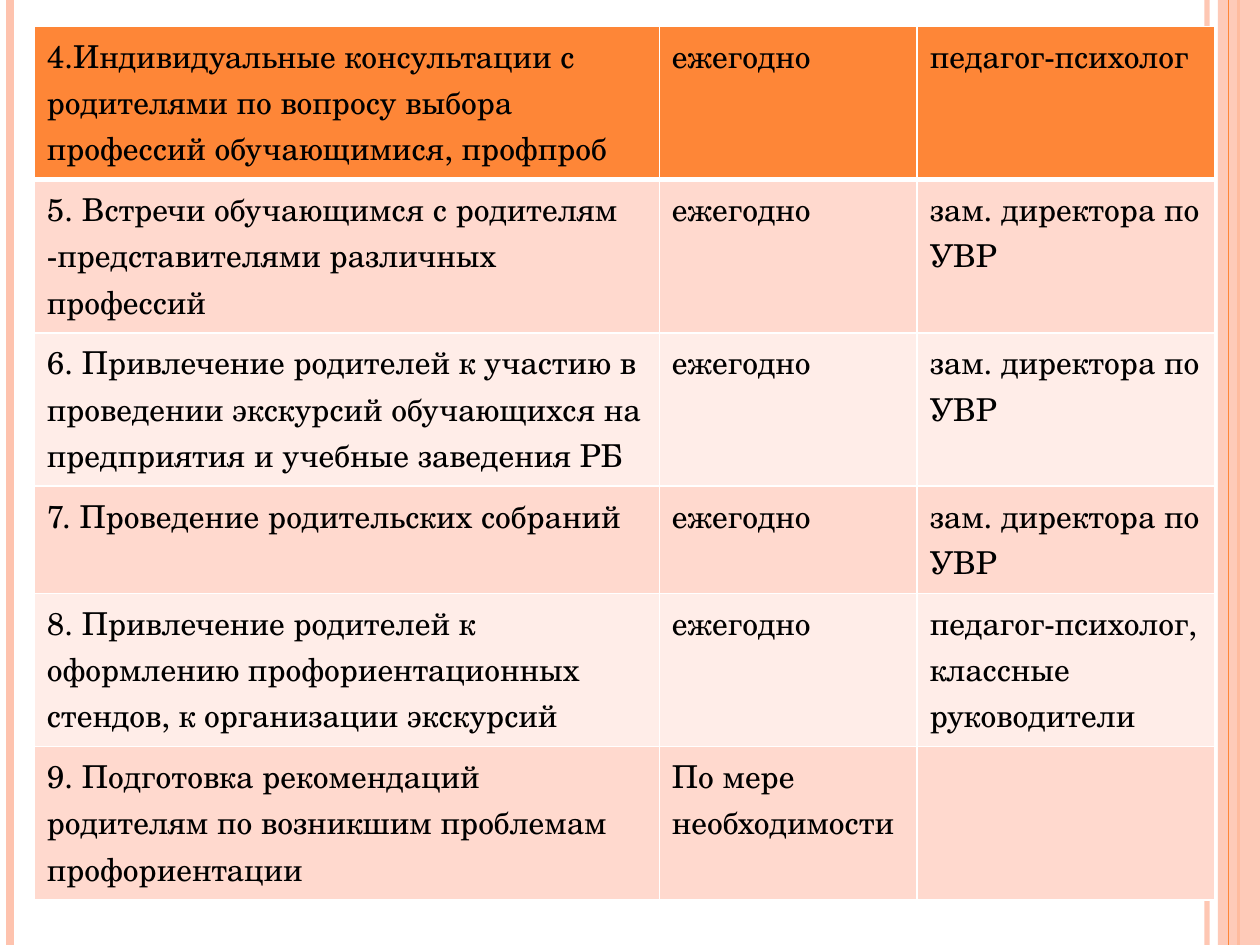
from lxml import etree
from pptx import Presentation
from pptx.dml.color import RGBColor
from pptx.enum.shapes import MSO_CONNECTOR as Connector, MSO_SHAPE as Shape
from pptx.oxml.ns import qn
from pptx.util import Cm, Pt

FONT = "TeX Gyre Schola"
ORANGE, PEACH, WHITE = "FE8637", "FEC3AE", "FFFFFF"
BANDS = ("FFD9CE", "FFEDE8")
SLIDE_WIDTH, SLIDE_HEIGHT = 25.4, 19.05

COLUMN_WIDTHS = (12.6, 5.2, 6.0)
TALL, SHORT = 3.09, 2.16
YEARLY, DEPUTY = "ежегодно", "зам. директора по УВР"
ROWS = (
    (TALL, "4.Индивидуальные консультации с родителями по вопросу выбора "
           "профессий обучающимися, профпроб", YEARLY, "педагог-психолог"),
    (TALL, "5. Встречи обучающимся с родителям -представителями различных "
           "профессий", YEARLY, DEPUTY),
    (TALL, "6. Привлечение родителей к участию в проведении экскурсий "
           "обучающихся на предприятия и учебные заведения РБ", YEARLY, DEPUTY),
    (SHORT, "7. Проведение родительских собраний", YEARLY, DEPUTY),
    (TALL, "8. Привлечение родителей к оформлению профориентационных стендов, "
           "к организации экскурсий", YEARLY,
     "педагог-психолог,\nклассные руководители"),
    (TALL, "9. Подготовка рекомендаций родителям по возникшим проблемам "
           "профориентации", "По мере необходимости", ""),
)


def rgb(color):
    return RGBColor.from_string(color)


def set_alpha(element, percent):
    color = element.find(".//" + qn("a:srgbClr"))
    etree.SubElement(color, qn("a:alpha"), val=str(percent * 1000))


def add_vertical_line(slide, x, color, width, alpha=100):
    line = slide.shapes.add_connector(
        Connector.STRAIGHT, Cm(x), 0, Cm(x), Cm(SLIDE_HEIGHT))
    line.line.color.rgb = rgb(color)
    line.line.width = Pt(width)
    properties = line._element.spPr
    if alpha < 100:
        set_alpha(properties, alpha)
    etree.SubElement(properties, qn("a:effectLst"))


def add_band(slide, x, color, alpha):
    """Fill the slide from x to its right edge."""
    band = slide.shapes.add_shape(
        Shape.RECTANGLE, Cm(x), 0, Cm(SLIDE_WIDTH - x), Cm(SLIDE_HEIGHT))
    band.shadow.inherit = False
    band.fill.solid()
    band.fill.fore_color.rgb = rgb(color)
    band.line.fill.background()
    set_alpha(band._element.spPr, alpha)


def write_text(frame, text, size=18, color="000000", font=FONT):
    frame.text = text
    for paragraph in frame.paragraphs:
        paragraph.font.size = Pt(size)
        for run in paragraph.runs:
            run.font.name = font
            run.font.size = Pt(size)
            run.font.bold = False
            run.font.color.rgb = rgb(color)


def set_borders(cell, color, bottom):
    properties = cell._tc.get_or_add_tcPr()
    sides = (("a:lnL", 1), ("a:lnR", 1), ("a:lnT", 1), ("a:lnB", bottom))
    for index, (tag, width) in enumerate(sides):
        border = etree.Element(qn(tag), w=str(Pt(width)))
        fill = etree.SubElement(border, qn("a:solidFill"))
        etree.SubElement(fill, qn("a:srgbClr"), val=color)
        properties.insert(index, border)


def add_plan_table(slide, left, top):
    table = slide.shapes.add_table(
        len(ROWS), len(COLUMN_WIDTHS), Cm(left), Cm(top),
        Cm(sum(COLUMN_WIDTHS)), Cm(sum(row[0] for row in ROWS))).table
    for column, width in zip(table.columns, COLUMN_WIDTHS):
        column.width = Cm(width)
    for index, (height, *texts) in enumerate(ROWS):
        table.rows[index].height = Cm(height)
        for cell, text in zip(table.rows[index].cells, texts):
            write_text(cell.text_frame, text)
            cell.fill.solid()
            cell.fill.fore_color.rgb = rgb(
                BANDS[(index - 1) % 2] if index else ORANGE)
            set_borders(cell, WHITE, bottom=1 if index else 3)


def main():
    presentation = Presentation()
    presentation.slide_width = Cm(SLIDE_WIDTH)
    presentation.slide_height = Cm(SLIDE_HEIGHT)
    slide = presentation.slides.add_slide(presentation.slide_layouts[6])
    add_vertical_line(slide, 24.33, PEACH, 3, alpha=93)
    add_vertical_line(slide, 0.2, PEACH, 4.5)
    add_vertical_line(slide, 24.97, ORANGE, 1.5)
    add_band(slide, 24.55, PEACH, alpha=87)
    add_vertical_line(slide, 24.77, ORANGE, 0.75)
    add_plan_table(slide, left=0.69, top=0.53)
    presentation.save("out.pptx")


if __name__ == "__main__":
    main()
